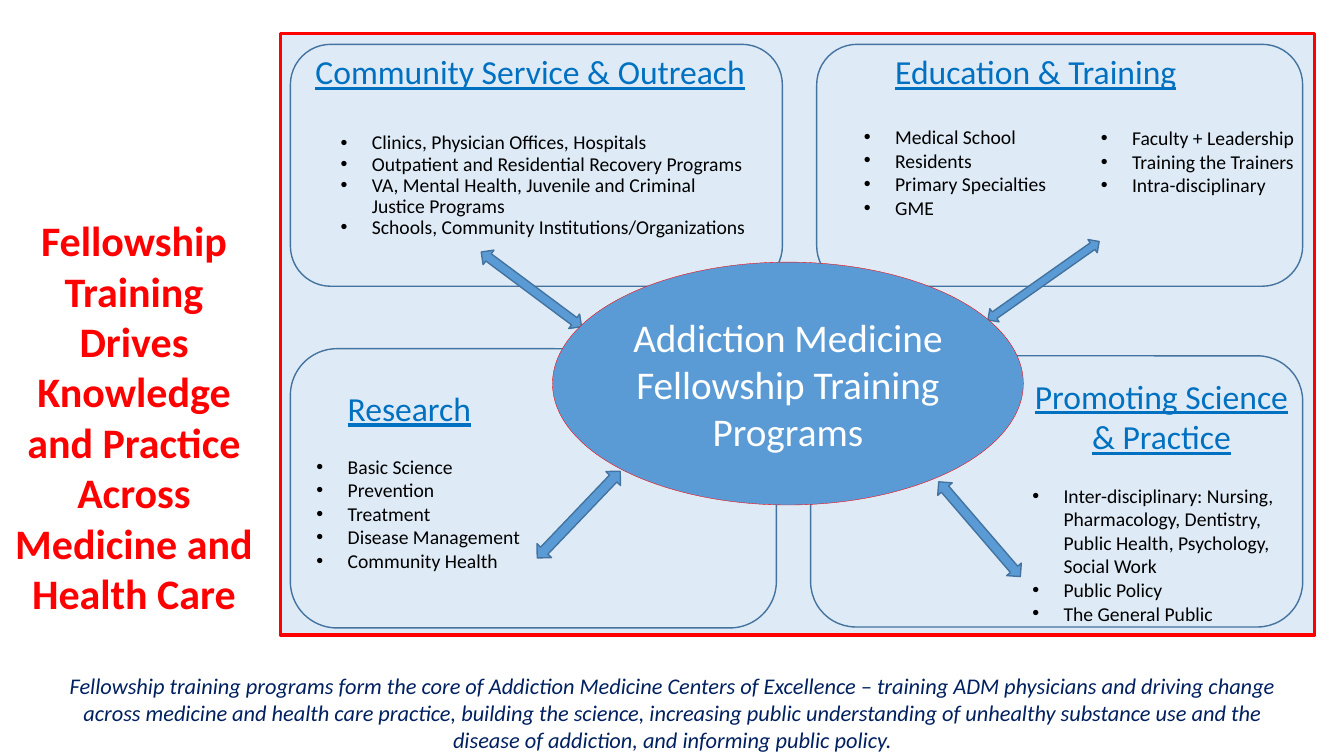
from dataclasses import dataclass

from lxml import etree
from pptx import Presentation
from pptx.dml.color import RGBColor
from pptx.enum.shapes import MSO_SHAPE
from pptx.enum.text import MSO_ANCHOR, MSO_AUTO_SIZE, PP_ALIGN
from pptx.oxml.ns import qn
from pptx.util import Inches, Pt

RECTANGLE = MSO_SHAPE.RECTANGLE
ROUNDED = MSO_SHAPE.ROUNDED_RECTANGLE
ELLIPSE = MSO_SHAPE.OVAL
DOUBLE_ARROW = MSO_SHAPE.UP_DOWN_ARROW
LEFT, CENTER = PP_ALIGN.LEFT, PP_ALIGN.CENTER
MIDDLE = MSO_ANCHOR.MIDDLE
GROW = MSO_AUTO_SIZE.SHAPE_TO_FIT_TEXT

RED = RGBColor(0xFF, 0x00, 0x00)
NAVY = RGBColor(0x00, 0x20, 0x60)
HEADING_BLUE = RGBColor(0x00, 0x70, 0xC0)
MID_BLUE = RGBColor(0x5B, 0x9B, 0xD5)
EDGE_BLUE = RGBColor(0x43, 0x73, 0x9E)
PALE_BLUE = RGBColor(0xDE, 0xEB, 0xF7)
BLACK = RGBColor(0x00, 0x00, 0x00)
WHITE = RGBColor(0xFF, 0xFF, 0xFF)

BULLET_INDENT = Inches(0.31)

# Font formats by role
THEME = {"size": Pt(30), "bold": True}
SUMMARY = {"size": Pt(16), "italic": True}
HEADING = {"size": Pt(24), "underline": True}
BULLETS = {"size": Pt(14)}
CORE = {"size": Pt(28)}


@dataclass
class Box:
    left: float
    top: float
    width: float
    height: float

    def lengths(self) -> list:
        return [Inches(v) for v in (self.left, self.top, self.width, self.height)]


@dataclass
class Heading:
    box: Box
    lines: list[str]
    align: PP_ALIGN = LEFT
    wrap: bool = True


@dataclass
class BulletList:
    box: Box
    items: list[str]
    line_spacing: float = 1.0


@dataclass
class Arrow:
    box: Box
    rotation: float


FRAME = Box(2.78, 0.33, 10.26, 5.97)
CORE_BOX = Box(5.48, 2.6, 4.67, 2.41)

PANELS = [
    Box(2.88, 0.44, 4.88, 2.4),
    Box(8.1, 0.44, 4.82, 2.4),
    Box(2.88, 3.46, 4.82, 2.77),
    Box(8.04, 3.53, 4.88, 2.69),
]

HEADINGS = [
    Heading(Box(3.03, 0.46, 4.5, 0.5), ["Community Service & Outreach"], wrap=False),
    Heading(Box(8.78, 0.46, 3.02, 0.5), ["Education & Training"], wrap=False),
    Heading(Box(3.35, 3.8, 1.88, 0.5), ["Research"]),
    Heading(Box(9.82, 3.68, 3.4, 0.91), ["Promoting Science", "& Practice"], CENTER),
]

LISTS = [
    BulletList(Box(3.28, 1.27, 4.25, 1.17), [
        "Clinics, Physician Offices, Hospitals",
        "Outpatient and Residential Recovery Programs",
        "VA, Mental Health, Juvenile and Criminal Justice Programs",
        "Schools, Community Institutions/Organizations",
    ], 0.9),
    BulletList(Box(8.47, 1.19, 2.7, 1.33),
               ["Medical School", "Residents", "Primary Specialties", "GME"]),
    BulletList(Box(10.82, 1.2, 2.4, 0.81),
               ["Faculty + Leadership", "Training the Trainers", "Intra-disciplinary"]),
    BulletList(Box(3.04, 4.46, 2.41, 1.55),
               ["Basic Science", "Prevention", "Treatment", "Disease Management",
                "Community Health"]),
    BulletList(Box(10.14, 4.75, 2.84, 1.75), [
        "Inter-disciplinary: Nursing, Pharmacology, Dentistry, Public Health, "
        "Psychology, Social Work",
        "Public Policy",
        "The General Public",
    ]),
]

ARROWS = [
    Arrow(Box(5.18, 2.25, 0.18, 1.24), 126.7),
    Arrow(Box(10.27, 2.11, 0.16, 1.35), 54.8),
    Arrow(Box(5.64, 4.51, 0.2, 1.19), 223.7),
    Arrow(Box(9.62, 4.63, 0.19, 1.24), 139.3),
]


def add_figure(slide, kind: MSO_SHAPE, box: Box, fill: RGBColor | None = None,
               edge: RGBColor = EDGE_BLUE, weight: float = 1):
    figure = slide.shapes.add_shape(kind, *box.lengths())
    figure.shadow.inherit = False
    if fill is None:
        figure.fill.background()
    else:
        figure.fill.solid()
        figure.fill.fore_color.rgb = fill
    figure.line.color.rgb = edge
    figure.line.width = Pt(weight)
    return figure


def write(frame, lines: list[str], style: dict, color: RGBColor,
          align: PP_ALIGN = LEFT) -> None:
    for index, line in enumerate(lines):
        paragraph = frame.add_paragraph() if index else frame.paragraphs[0]
        paragraph.alignment = align
        run = paragraph.add_run()
        run.text = line
        for attribute, value in {"name": "Calibri", **style}.items():
            setattr(run.font, attribute, value)
        run.font.color.rgb = color


def add_text(slide, box: Box, lines: list[str], style: dict, color: RGBColor,
             align: PP_ALIGN = LEFT, wrap: bool = True):
    frame = slide.shapes.add_textbox(*box.lengths()).text_frame
    frame.word_wrap = wrap
    frame.auto_size = GROW
    write(frame, lines, style, color, align)
    return frame


def add_bullets(slide, bullets: BulletList) -> None:
    frame = add_text(slide, bullets.box, bullets.items, BULLETS, BLACK)
    for paragraph in frame.paragraphs:
        paragraph.line_spacing = bullets.line_spacing
        properties = paragraph._p.get_or_add_pPr()
        properties.set("marL", str(BULLET_INDENT))
        properties.set("indent", str(-BULLET_INDENT))
        etree.SubElement(properties, qn("a:buFont"), typeface="Arial")
        etree.SubElement(properties, qn("a:buChar"), char="•")


def main() -> None:
    deck = Presentation()
    deck.slide_width, deck.slide_height = Inches(13.33), Inches(7.5)
    slide = deck.slides.add_slide(deck.slide_layouts[6])

    # Theme on the left and summary at the bottom
    add_text(slide, Box(0.01, 2.08, 2.64, 4.75), [
        "Fellowship Training Drives Knowledge and Practice Across Medicine and Health Care",
    ], THEME, RED, CENTER)
    add_text(slide, Box(0.43, 6.62, 12.48, 0.91), [
        "Fellowship training programs form the core of Addiction Medicine Centers of "
        "Excellence – training ADM physicians and driving change across medicine and "
        "health care practice, building the science, increasing public understanding of "
        "unhealthy substance use and the disease of addiction, and informing public policy.",
    ], SUMMARY, NAVY, CENTER)

    # Frame with four panels
    add_figure(slide, RECTANGLE, FRAME, PALE_BLUE, RED, 2.25)
    for panel in PANELS:
        add_figure(slide, ROUNDED, panel)
    for bullets in LISTS:
        add_bullets(slide, bullets)
    for heading in HEADINGS:
        add_text(slide, heading.box, heading.lines, HEADING, HEADING_BLUE,
                 heading.align, heading.wrap)

    # Arrows between the panels and the core
    for arrow in ARROWS:
        add_figure(slide, DOUBLE_ARROW, arrow.box, MID_BLUE).rotation = arrow.rotation

    # Core programs
    core = add_figure(slide, ELLIPSE, CORE_BOX, MID_BLUE, RED, 0.25)
    core.text_frame.word_wrap = True
    core.text_frame.vertical_anchor = MIDDLE
    write(core.text_frame, ["Addiction Medicine Fellowship Training Programs"],
          CORE, WHITE, CENTER)

    deck.save("out.pptx")


if __name__ == "__main__":
    main()
